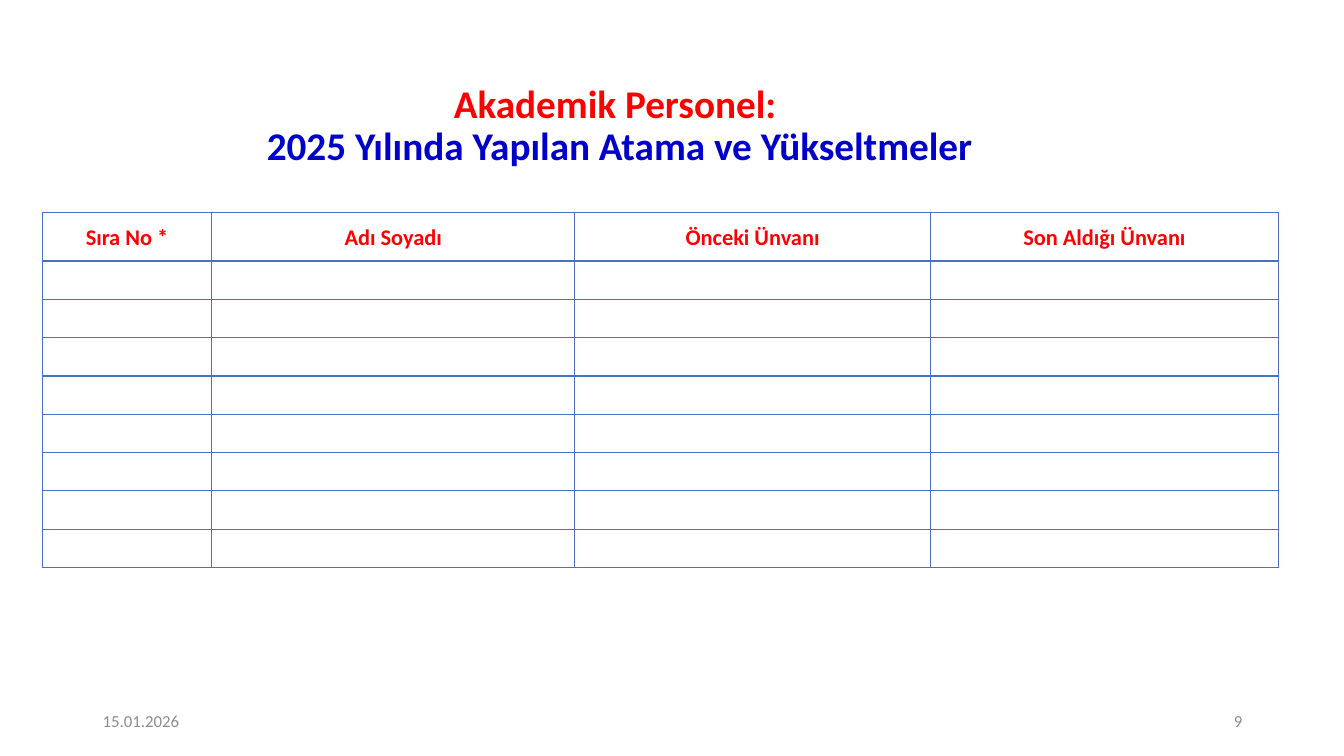
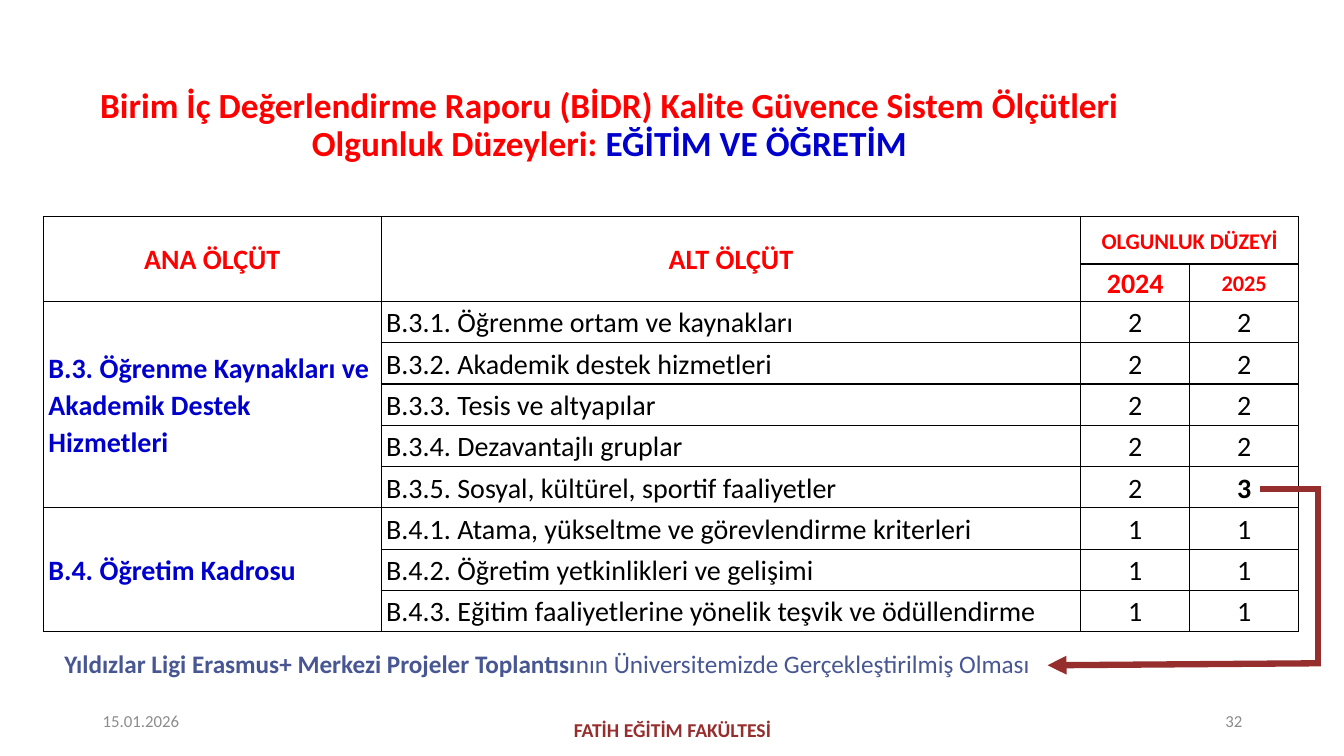
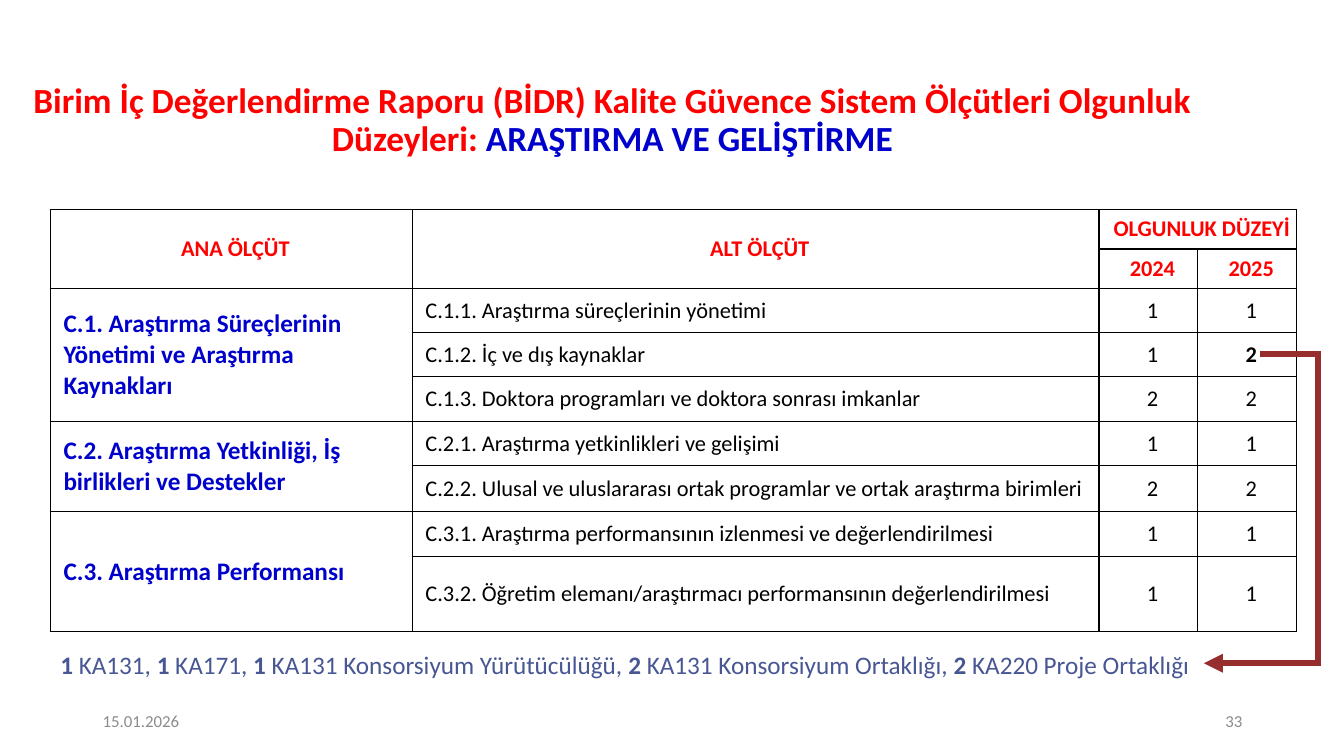
from copy import deepcopy
from itertools import product

from lxml.etree import SubElement
from pptx import Presentation
from pptx.dml.color import RGBColor
from pptx.enum.shapes import MSO_CONNECTOR
from pptx.enum.text import MSO_ANCHOR, MSO_AUTO_SIZE, PP_ALIGN
from pptx.oxml.ns import qn
from pptx.util import Pt

PX = 9144  # EMU in one px, 100 px to the inch
FONT = "Calibri"
COLORS = {
    "red": "FF0000",
    "blue": "0000CC",
    "black": "000000",
    "grey": "8C8C8C",
    "maroon": "962E2E",
    "slate": "485793",
    "grid": "4472C4",
}
DATE = "15.01.2026"
REPORT_TITLE = ("Birim İç Değerlendirme Raporu (BİDR) Kalite Güvence Sistem "
                "Ölçütleri Olgunluk Düzeyleri: ")

STAFF_HEADERS = ["Sıra No *", "Adı Soyadı", "Önceki Ünvanı", "Son Aldığı Ünvanı"]
TEACHING_CRITERIA = [
    ("B.3. Öğrenme Kaynakları ve Akademik Destek Hizmetleri", [
        ("B.3.1. Öğrenme ortam ve kaynakları", 2, 2),
        ("B.3.2. Akademik destek hizmetleri", 2, 2),
        ("B.3.3. Tesis ve altyapılar", 2, 2),
        ("B.3.4. Dezavantajlı gruplar", 2, 2),
        ("B.3.5. Sosyal, kültürel, sportif faaliyetler", 2, 3),
    ]),
    ("B.4. Öğretim Kadrosu", [
        ("B.4.1. Atama, yükseltme ve görevlendirme kriterleri", 1, 1),
        ("B.4.2. Öğretim yetkinlikleri ve gelişimi", 1, 1),
        ("B.4.3. Eğitim faaliyetlerine yönelik teşvik ve ödüllendirme", 1, 1),
    ]),
]
RESEARCH_CRITERIA = [
    ("C.1. Araştırma Süreçlerinin Yönetimi ve Araştırma Kaynakları", [
        ("C.1.1. Araştırma süreçlerinin yönetimi", 1, 1),
        ("C.1.2. İç ve dış kaynaklar", 1, 2),
        ("C.1.3. Doktora programları ve doktora sonrası imkanlar", 2, 2),
    ]),
    ("C.2. Araştırma Yetkinliği, İş birlikleri ve Destekler", [
        ("C.2.1. Araştırma yetkinlikleri ve gelişimi", 1, 1),
        ("C.2.2. Ulusal ve uluslararası ortak programlar ve ortak araştırma birimleri", 2, 2),
    ]),
    ("C.3. Araştırma Performansı", [
        ("C.3.1. Araştırma performansının izlenmesi ve değerlendirilmesi", 1, 1),
        ("C.3.2. Öğretim elemanı/araştırmacı performansının değerlendirilmesi", 1, 1),
    ]),
]
PROJECTS = [("1", " KA131, "), ("1", " KA171, "),
            ("1", " KA131 Konsorsiyum Yürütücülüğü, "),
            ("2", " KA131 Konsorsiyum Ortaklığı, "), ("2", " KA220 Proje Ortaklığı")]


def rgb(name):
    return RGBColor.from_string(COLORS[name])


def write_text(frame, content, size, color="black", bold=False,
               align=PP_ALIGN.LEFT, spacing=None):
    """Fill the first paragraph; content is a string or (text, overrides) runs."""
    paragraph = frame.paragraphs[0]
    paragraph.alignment = align
    paragraph.line_spacing = spacing
    runs = [(content, {})] if isinstance(content, str) else content
    for text, overrides in runs:
        run_format = {"color": color, "bold": bold, **overrides}
        for index, line in enumerate(text.split("\n")):
            if index:
                paragraph.add_line_break()
                paragraph._p[-1].append(deepcopy(run._r.rPr))
            if not line:
                continue
            run = paragraph.add_run()
            run.text = line
            run.font.name = FONT
            run.font.size = Pt(size)
            run.font.bold = run_format["bold"]
            run.font.color.rgb = rgb(run_format["color"])


def place(shape, left, top, width, height):
    shape.left, shape.top = left * PX, top * PX
    shape.width, shape.height = width * PX, height * PX


def add_label(slide, box, content, size, anchor=MSO_ANCHOR.MIDDLE, **text_format):
    label = slide.shapes.add_textbox(*(value * PX for value in box))
    label.text_frame.word_wrap = True
    label.text_frame.vertical_anchor = anchor
    write_text(label.text_frame, content, size, **text_format)


def add_slide(presentation, box, red_text, blue_text, title_size, number):
    """Add a slide with its two-colour title, date and page number."""
    slide = presentation.slides.add_slide(presentation.slide_layouts[5])
    title = slide.shapes.title
    place(title, *box)
    title.text_frame.word_wrap = True
    title.text_frame.auto_size = MSO_AUTO_SIZE.NONE
    title.text_frame.vertical_anchor = MSO_ANCHOR.MIDDLE
    write_text(title.text_frame, [(red_text, {}), (blue_text, {"color": "blue"})],
               title_size, color="red", bold=True, align=PP_ALIGN.CENTER, spacing=0.9)
    add_label(slide, (92, 695, 300, 40), DATE, 12, color="grey")
    add_label(slide, (942, 695, 300, 40), str(number), 12, color="grey",
              align=PP_ALIGN.RIGHT)
    return slide


def set_borders(cell, color):
    properties = cell._tc.get_or_add_tcPr()
    for side in ("lnL", "lnR", "lnT", "lnB"):
        line = SubElement(properties, qn(f"a:{side}"), w=str(Pt(1)))
        fill = SubElement(line, qn("a:solidFill"))
        SubElement(fill, qn("a:srgbClr"), val=COLORS[color])


def add_grid(slide, left, top, widths, heights, border, margin_left=0, margin_right=0):
    """Add an unfilled table whose cells all carry the same border."""
    table = slide.shapes.add_table(
        len(heights), len(widths), left * PX, top * PX,
        sum(widths) * PX, sum(heights) * PX).table
    table.first_row = table.horz_banding = False
    for column, width in zip(table.columns, widths):
        column.width = width * PX
    for row, height in zip(table.rows, heights):
        row.height = height * PX
    for row, column in product(range(len(heights)), range(len(widths))):
        cell = table.cell(row, column)
        set_borders(cell, border)
        cell.fill.background()
        cell.vertical_anchor = MSO_ANCHOR.MIDDLE
        cell.margin_top = cell.margin_bottom = 0
        cell.margin_left, cell.margin_right = margin_left * PX, margin_right * PX
    return table


def add_criteria_table(slide, left, top, widths, heights, criteria, header_sizes,
                       main_size, sub_size, margin_left, spacing=None):
    """Add main criteria with sub-criteria; a level that changed in 2025 is bold."""
    table = add_grid(slide, left, top, widths, heights, "black", margin_left, 5)

    def fill(row, column, text, size, **text_format):
        write_text(table.cell(row, column).text_frame, text, size,
                   spacing=spacing, **text_format)

    table.cell(0, 0).merge(table.cell(1, 0))
    table.cell(0, 1).merge(table.cell(1, 1))
    table.cell(0, 2).merge(table.cell(0, 3))
    headers = [(0, 0, "ANA ÖLÇÜT"), (0, 1, "ALT ÖLÇÜT"), (0, 2, "OLGUNLUK DÜZEYİ"),
               (1, 2, "2024"), (1, 3, "2025")]
    for (row, column, text), size in zip(headers, header_sizes):
        fill(row, column, text, size, color="red", bold=True, align=PP_ALIGN.CENTER)

    row = 2
    for main_criterion, sub_criteria in criteria:
        table.cell(row, 0).merge(table.cell(row + len(sub_criteria) - 1, 0))
        fill(row, 0, main_criterion, main_size, color="blue", bold=True)
        for sub_criterion, before, after in sub_criteria:
            fill(row, 1, sub_criterion, sub_size)
            fill(row, 2, str(before), sub_size, align=PP_ALIGN.CENTER)
            fill(row, 3, str(after), sub_size, bold=before != after,
                 align=PP_ALIGN.CENTER)
            row += 1


def add_line(slide, start, end, arrow=False):
    connector = slide.shapes.add_connector(
        MSO_CONNECTOR.STRAIGHT, *(value * PX for value in (*start, *end)))
    connector.line.color.rgb = rgb("maroon")
    connector.line.width = Pt(4.5)
    if arrow:
        SubElement(connector.line._get_or_add_ln(), qn("a:tailEnd"), type="triangle")
    SubElement(connector._element.spPr, qn("a:effectLst"))


def add_change_arrow(slide, level_y, tip):
    """Lead from a changed level round the table's right edge to the note."""
    add_line(slide, (1310, 658), tip, arrow=True)
    add_line(slide, (1307, 660), (1307, level_y))
    add_line(slide, (1250, level_y), (1310, level_y))


def add_note(slide, box, content):
    add_label(slide, box, content, 18, anchor=MSO_ANCHOR.TOP, color="slate")


def build_staff_slide(presentation):
    slide = add_slide(presentation, (36, 87, 1148, 78), "Akademik Personel:\n",
                      " 2025 Yılında Yapılan Atama ve Yükseltmeler", 28, 9)
    table = add_grid(slide, 42, 211, [168, 360, 353, 345], [48] + [38] * 8, "grid")
    for column, header in enumerate(STAFF_HEADERS):
        write_text(table.cell(0, column).text_frame, header, 16, color="red",
                   bold=True, align=PP_ALIGN.CENTER, spacing=1.07)


def build_teaching_slide(presentation):
    slide = add_slide(presentation, (43, 90, 1123, 70), REPORT_TITLE,
                      "EĞİTİM VE ÖĞRETİM", 25.2, 32)
    add_label(slide, (442, 704, 450, 40), "FATİH EĞİTİM FAKÜLTESİ", 14,
              color="maroon", bold=True, align=PP_ALIGN.CENTER)
    add_criteria_table(slide, 43, 215, [335, 694, 108, 108], [47, 37] + [41] * 8,
                       TEACHING_CRITERIA, header_sizes=[20, 20, 16, 20, 16],
                       main_size=20, sub_size=20, margin_left=5, spacing=1.07)
    add_note(slide, (54, 638, 1123, 40), [
        ("Yıldızlar Ligi Erasmus+ Merkezi Projeler Toplantısı", {"bold": True}),
        ("nın Üniversitemizde Gerçekleştirilmiş Olması", {})])
    add_change_arrow(slide, 485, (1039, 660))


def build_research_slide(presentation):
    slide = add_slide(presentation, (23, 80, 1169, 80), REPORT_TITLE,
                      "ARAŞTIRMA VE GELİŞTİRME", 25.2, 33)
    add_criteria_table(slide, 50, 208, [359, 681, 98, 98],
                       [39, 39, 44, 44, 44, 44, 46, 44, 75],
                       RESEARCH_CRITERIA, header_sizes=[16] * 5,
                       main_size=18, sub_size=16, margin_left=13)
    runs = []
    for count, project in PROJECTS:
        runs += [(count, {"bold": True}), (project, {})]
    add_note(slide, (50, 639, 1257, 40), runs)
    add_change_arrow(slide, 351, (1194, 658))


def main():
    presentation = Presentation()
    presentation.slide_width, presentation.slide_height = 1333 * PX, 750 * PX
    build_staff_slide(presentation)
    build_teaching_slide(presentation)
    build_research_slide(presentation)
    presentation.save("out.pptx")


if __name__ == "__main__":
    main()
